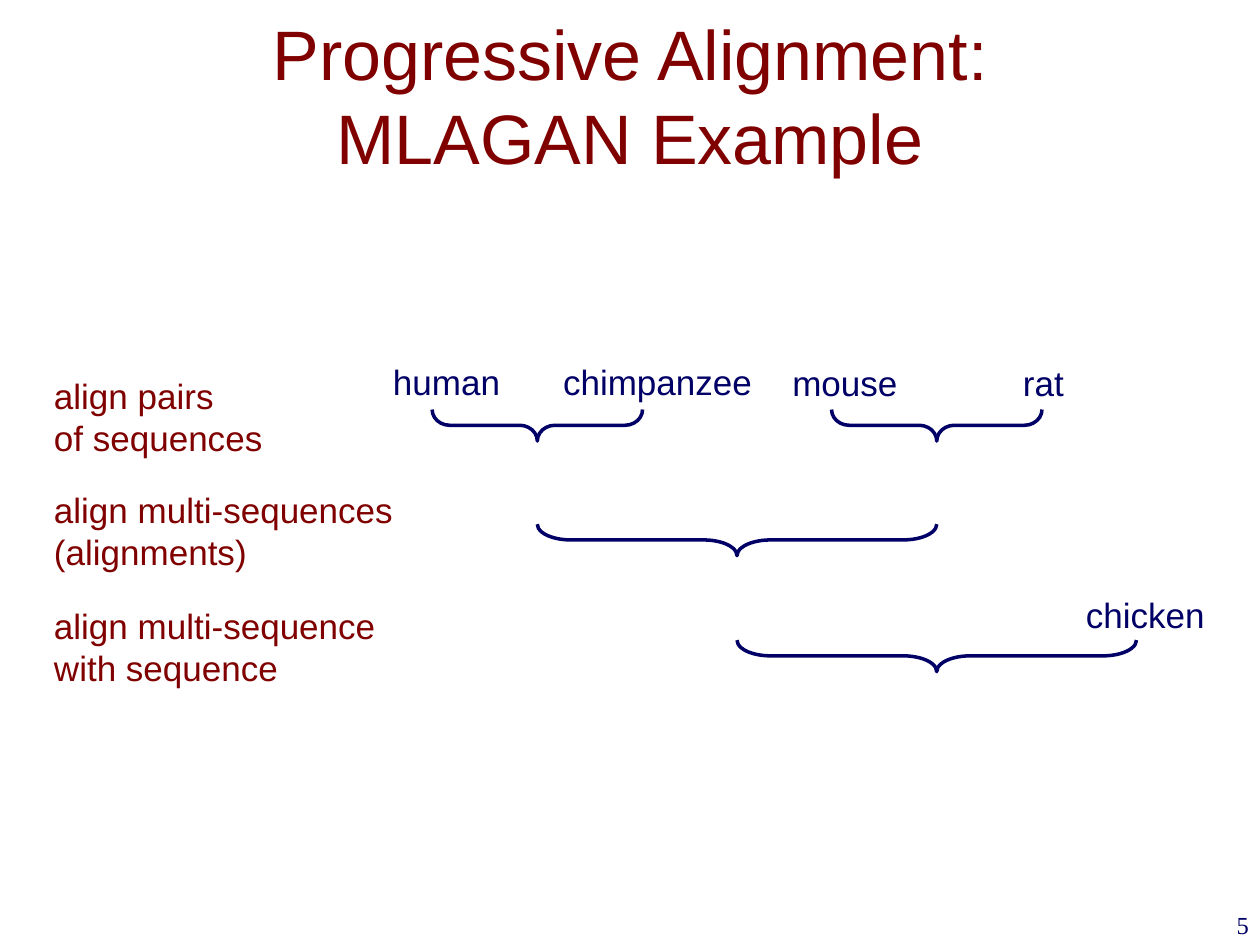
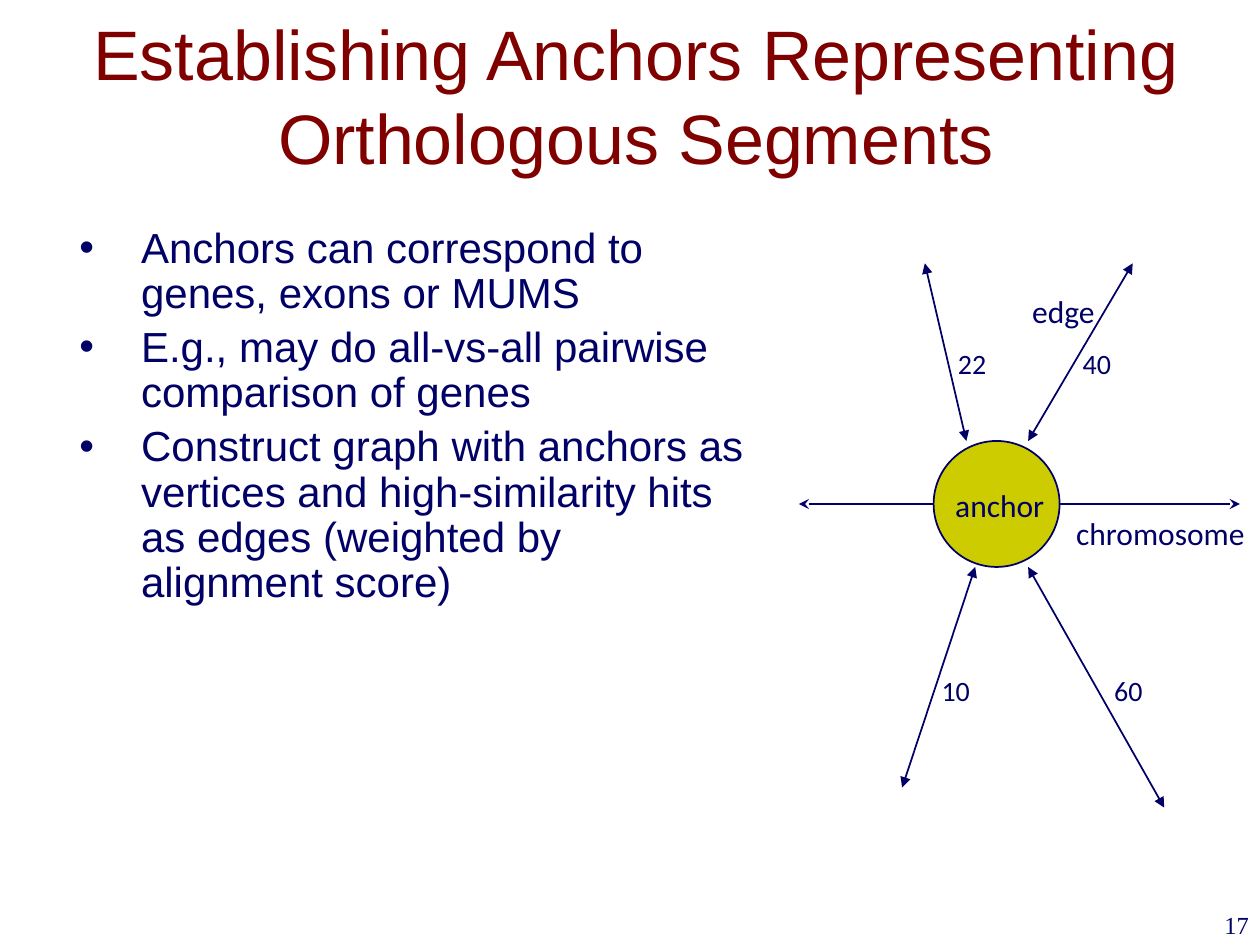
from pptx import Presentation, util as u
from pptx.dml.color import RGBColor
from pptx.enum import shapes as shp, text as txt
from pptx.oxml.ns import qn
from lxml import etree

PX = 9144  # 100 px to the inch
INK = {"navy": "000066", "wine": "800000", "gold": "CCCC00", "white": "FFFFFF"}
SANS, BODY, SERIF = "Arial", "Calibri", "Times New Roman"
LEFT, MID, RIGHT = txt.PP_ALIGN.LEFT, txt.PP_ALIGN.CENTER, txt.PP_ALIGN.RIGHT


def px(*nums):
    return [u.Emu(round(n * PX)) for n in nums]


def tint(name):
    return RGBColor.from_string(INK[name])


def place(shape, box):
    shape.left, shape.top, shape.width, shape.height = px(*box)


def pad(frame, *sides):
    (frame.margin_left, frame.margin_top,
     frame.margin_right, frame.margin_bottom) = px(*sides)


def style(frame, size, ink, font=SANS, align=LEFT):
    for para in frame.paragraphs:
        para.alignment = align
        for run in para.runs:
            run.font.size = u.Pt(size)
            run.font.name = font
            run.font.color.rgb = tint(ink)


def pen(shape, width):
    shape.line.color.rgb = tint("navy")
    shape.line.width = u.Pt(width)


def label(slide, box, words, size=20, ink="navy", font=SANS, align=LEFT, wrap=False):
    frame = slide.shapes.add_textbox(*px(*box)).text_frame
    frame.text = words
    frame.word_wrap = wrap
    if not wrap:
        frame.auto_size = txt.MSO_AUTO_SIZE.SHAPE_TO_FIT_TEXT
    style(frame, size, ink, font, align)
    return frame


# Parts shared by both slides
def start(deck, layout, box, words, number):
    slide = deck.slides.add_slide(deck.slide_layouts[layout])
    slide.background.fill.solid()
    slide.background.fill.fore_color.rgb = tint("white")
    title = slide.shapes.title
    place(title, box)
    frame = title.text_frame
    frame.paragraphs[0].text = words
    frame.word_wrap = True
    frame.auto_size = txt.MSO_AUTO_SIZE.NONE
    frame.vertical_anchor = txt.MSO_ANCHOR.MIDDLE
    style(frame, 40, "wine", align=MID)
    label(slide, (793, 717, 208, 50), number, 14, font=SERIF, align=RIGHT, wrap=True)
    return slide


# Tree of alignments
def brace(slide, left, right, top):
    """Draw a brace that opens upward and return the x of its tip."""
    wide, deep = right - left, 25
    mid = (left + right) / 2
    box = (mid - deep / 2, top + deep / 2 - wide / 2, deep, wide)
    part = slide.shapes.add_shape(shp.MSO_SHAPE.LEFT_BRACE, *px(*box))
    part.rotation = 270
    part.adjustments[0] = wide / 300
    part.shadow.inherit = False
    part.fill.background()
    pen(part, 2)
    return mid


def tree(slide, box):
    x, y = box[:2]
    rows = [y + 275 * i // 3 for i in range(3)]
    steps = (("align pairs\nof sequences", 187),
             ("align multi-sequences\n(alignments)", 291),
             ("align multi-sequence\nwith sequence", 279))
    for top, (words, wide) in zip(rows, steps):
        label(slide, (x, top, wide, 77), words, ink="wine")

    names = (("human", 269, -11, 106), ("chimpanzee", 404, -11, 171),
             ("mouse", 586, -10, 104), ("rat", 769, -10, 53),
             ("chicken", 819, 174, 115))
    for name, dx, dy, wide in names:
        label(slide, (x + dx, y + dy, wide, 44), name)

    # Each brace spans the tips of those above it
    tops = [row + 33 for row in rows]
    apes = brace(slide, x + 310, x + 477, tops[0])
    mice = brace(slide, x + 627, x + 794, tops[0])
    both = brace(slide, apes, mice, tops[1])
    brace(slide, both, x + 869, tops[2])


# Bulleted points
def points(slide, box, lines):
    body = slide.placeholders[1]
    place(body, box)
    frame = body.text_frame
    frame.text = "\n".join(lines)
    frame.word_wrap = True
    frame.auto_size = txt.MSO_AUTO_SIZE.NONE
    pad(frame, 5, 5, 5, 5)
    style(frame, 24, "navy")
    for para in frame.paragraphs:
        para.line_spacing = 0.9
        para.space_before = u.Pt(5)
        props = para._p.get_or_add_pPr()
        props.set("marL", str(71 * PX))
        props.set("indent", str(-49 * PX))


# Graph around one anchor
def arrow(slide, ends, tip):
    part = slide.shapes.add_connector(shp.MSO_CONNECTOR.STRAIGHT, *px(*ends))
    pen(part, 1)
    line = part.line._get_or_add_ln()
    for tag in ("a:headEnd", "a:tailEnd"):
        etree.SubElement(line, qn(tag)).set("type", tip)
    etree.SubElement(part._element.spPr, qn("a:effectLst"))


def graph(slide, box):
    x, y = box[:2]
    arrow(slide, (x, y + 191, x + 350, y + 191), "stealth")

    node = slide.shapes.add_shape(shp.MSO_SHAPE.OVAL, *px(x + 107, y + 141, 100, 100))
    node.shadow.inherit = False
    node.fill.solid()
    node.fill.fore_color.rgb = tint("gold")
    pen(node, 1)

    edges = ((182, 141, 265, 0), (133, 141, 100, 0),
             (182, 241, 290, 432), (140, 241, 82, 416))
    for ax, ay, bx, by in edges:
        arrow(slide, (x + ax, y + ay, x + bx, y + by), "triangle")

    tags = (("chromosome", 214, 199, 146, 18), ("anchor", 121, 177, 77, 18),
            ("edge", 182, 23, 56, 18), ("22", 125, 66, 25, 16),
            ("40", 224, 66, 25, 16), ("60", 249, 325, 25, 16),
            ("10", 112, 325, 25, 16))
    for words, dx, dy, wide, size in tags:
        spot = (x + dx, y + dy, wide, 30 if size == 18 else 27)
        frame = label(slide, spot, words, size, font=BODY, align=MID)
        frame.vertical_anchor = txt.MSO_ANCHOR.MIDDLE
        frame.paragraphs[0].space_before = u.Pt(size * 0.45)
        pad(frame, 0, 0, 0, 0)


def main():
    deck = Presentation()
    deck.slide_width, deck.slide_height = px(1000, 750)

    first = start(deck, 5, (75, 25, 850, 100),
                  "Progressive Alignment:\vMLAGAN Example", "5")
    tree(first, (33, 292, 934, 260))

    second = start(deck, 1, (28, 17, 947, 116),
                   "Establishing Anchors Representing Orthologous Segments", "17")
    pad(second.shapes.title.text_frame, 10, 5, 4, 5)
    points(second, (36, 175, 564, 516), (
        "Anchors can correspond to genes, exons or MUMS",
        "E.g., may do all-vs-all pairwise comparison of genes",
        "Construct graph with anchors as vertices and high-similarity hits "
        "as edges (weighted by alignment score)"))
    graph(second, (634, 209, 360, 432))

    deck.save("out.pptx")


if __name__ == "__main__":
    main()
